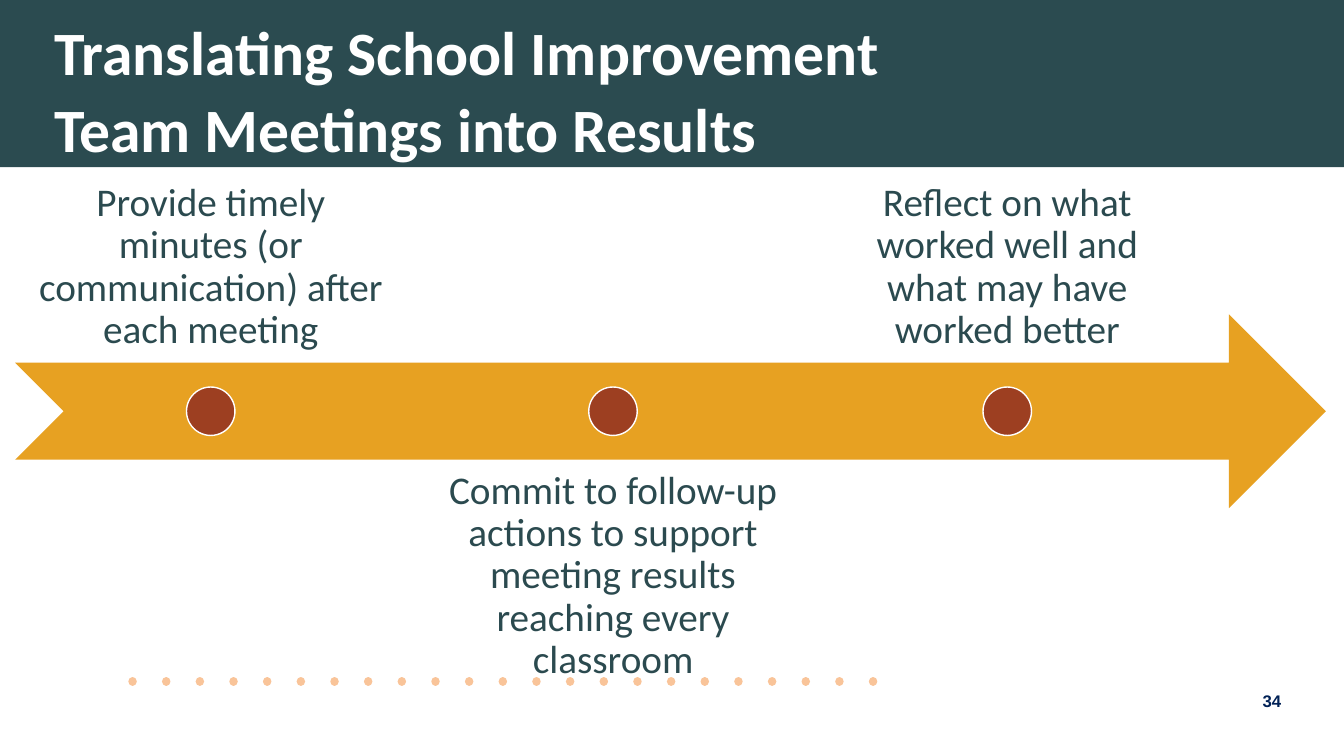
from lxml import etree
from pptx import Presentation
from pptx.dml.color import RGBColor
from pptx.enum.dml import MSO_LINE
from pptx.enum.shapes import MSO_CONNECTOR, MSO_SHAPE
from pptx.enum.text import MSO_ANCHOR, MSO_AUTO_SIZE, PP_ALIGN
from pptx.oxml.ns import qn
from pptx.util import Inches, Pt

RECTANGLE = MSO_SHAPE.RECTANGLE
OVAL = MSO_SHAPE.OVAL
NOTCHED_ARROW = MSO_SHAPE.NOTCHED_RIGHT_ARROW
STRAIGHT = MSO_CONNECTOR.STRAIGHT
ROUND_DOT = MSO_LINE.SQUARE_DOT
TOP, MIDDLE, BOTTOM = MSO_ANCHOR.TOP, MSO_ANCHOR.MIDDLE, MSO_ANCHOR.BOTTOM
LEFT, CENTER = PP_ALIGN.LEFT, PP_ALIGN.CENTER
NO_AUTOFIT = MSO_AUTO_SIZE.NONE

WHITE = RGBColor(0xFF, 0xFF, 0xFF)
NAVY = RGBColor(0x00, 0x21, 0x56)
BAND_TEAL = RGBColor(0x2B, 0x4B, 0x50)
TEXT_TEAL = RGBColor(0x2B, 0x4A, 0x4F)
GOLD = RGBColor(0xE7, 0xA1, 0x22)
RUST = RGBColor(0x9D, 0x3F, 0x21)
PEACH = RGBColor(0xF9, 0xC4, 0x99)

SLIDE_W, SLIDE_H = 13.33, 7.5
BAND_H = 1.66

# Step wording, left edge and width of its column
STEPS = [
    ("Provide timely minutes (or communication) after each meeting", 0.15, 3.88),
    ("Commit to follow-up actions to support meeting results reaching every classroom",
     4.22, 3.72),
    ("Reflect on what worked well and what may have worked better", 8.13, 3.72),
]


def add_filled(slide, kind, left, top, width, height, color):
    shape = slide.shapes.add_shape(
        kind, Inches(left), Inches(top), Inches(width), Inches(height))
    shape.shadow.inherit = False
    shape.fill.solid()
    shape.fill.fore_color.rgb = color
    shape.line.fill.background()
    return shape


def set_text(shape, text, size, color, font="Calibri", bold=False, align=CENTER,
             anchor=TOP, spacing=1.0, inset_x=0.1, inset_y=0.05):
    frame = shape.text_frame
    frame.word_wrap = True
    frame.auto_size = NO_AUTOFIT
    frame.vertical_anchor = anchor
    frame.margin_left = frame.margin_right = Inches(inset_x)
    frame.margin_top = frame.margin_bottom = Inches(inset_y)
    frame.text = text
    paragraph = frame.paragraphs[0]
    paragraph.alignment = align
    paragraph.line_spacing = spacing
    paragraph.font.name = font
    paragraph.font.size = Pt(size)
    paragraph.font.bold = bold
    paragraph.font.color.rgb = color


def add_header(slide, left, top, width, height):
    add_filled(slide, RECTANGLE, left, top, width, height, BAND_TEAL)
    title = slide.shapes.title
    title.left, title.top = Inches(left + 0.44), Inches(top + 0.05)
    title.width, title.height = Inches(9.78), Inches(0.86)
    set_text(title, "Translating School Improvement Team Meetings into Results",
             44, WHITE, bold=True, align=LEFT, spacing=1.05)
    # Bring the title in front of the band
    slide.shapes.element.append(title.element)


def add_dotted_rule(slide, left, top, width):
    rule = slide.shapes.add_connector(
        STRAIGHT, Inches(left + width), Inches(top), Inches(left), Inches(top))
    rule.line.color.rgb = PEACH
    rule.line.width = Pt(6)
    rule.line.dash_style = ROUND_DOT
    properties = rule.element.spPr
    outline = properties.find(qn("a:ln"))
    outline.set("cap", "rnd")
    outline.find(qn("a:prstDash")).set("val", "dot")
    etree.SubElement(properties, qn("a:effectLst"))


def add_page_number(slide, left, top, width, height):
    number = slide.shapes.add_textbox(
        Inches(left), Inches(top), Inches(width), Inches(height))
    set_text(number, "34", 12, NAVY, font="Arial", bold=True, anchor=MIDDLE,
             inset_x=0.05, inset_y=0.02)


def add_timeline(slide, left, top, width, height):
    """Labels alternate above and below an arrow half as tall as its row."""
    row_h = height * 0.42
    middle = top + height / 2
    dot = row_h / 4
    add_filled(slide, NOTCHED_ARROW, left, middle - row_h / 2, width, row_h, GOLD)
    for index, (step, step_left, step_w) in enumerate(STEPS):
        above = index % 2 == 0
        label = slide.shapes.add_textbox(
            Inches(step_left), Inches(top if above else top + height - row_h),
            Inches(step_w), Inches(row_h))
        set_text(label, step, 28, TEXT_TEAL, anchor=BOTTOM if above else TOP,
                 spacing=0.9, inset_x=0.22, inset_y=0.22)
        marker = add_filled(slide, OVAL, step_left + (step_w - dot) / 2,
                            middle - dot / 2, dot, dot, RUST)
        marker.line.color.rgb = WHITE
        marker.line.width = Pt(1)


def main():
    deck = Presentation()
    deck.slide_width, deck.slide_height = Inches(SLIDE_W), Inches(SLIDE_H)
    slide = deck.slides.add_slide(deck.slide_layouts[5])
    add_page_number(slide, 12.4, 6.75, 0.43, 0.4)
    add_header(slide, 0, 0, SLIDE_W, BAND_H)
    add_dotted_rule(slide, 1.28, 6.76, 7.38)
    add_timeline(slide, 0.15, 1.79, 13, 4.58)
    deck.save("out.pptx")


if __name__ == "__main__":
    main()
